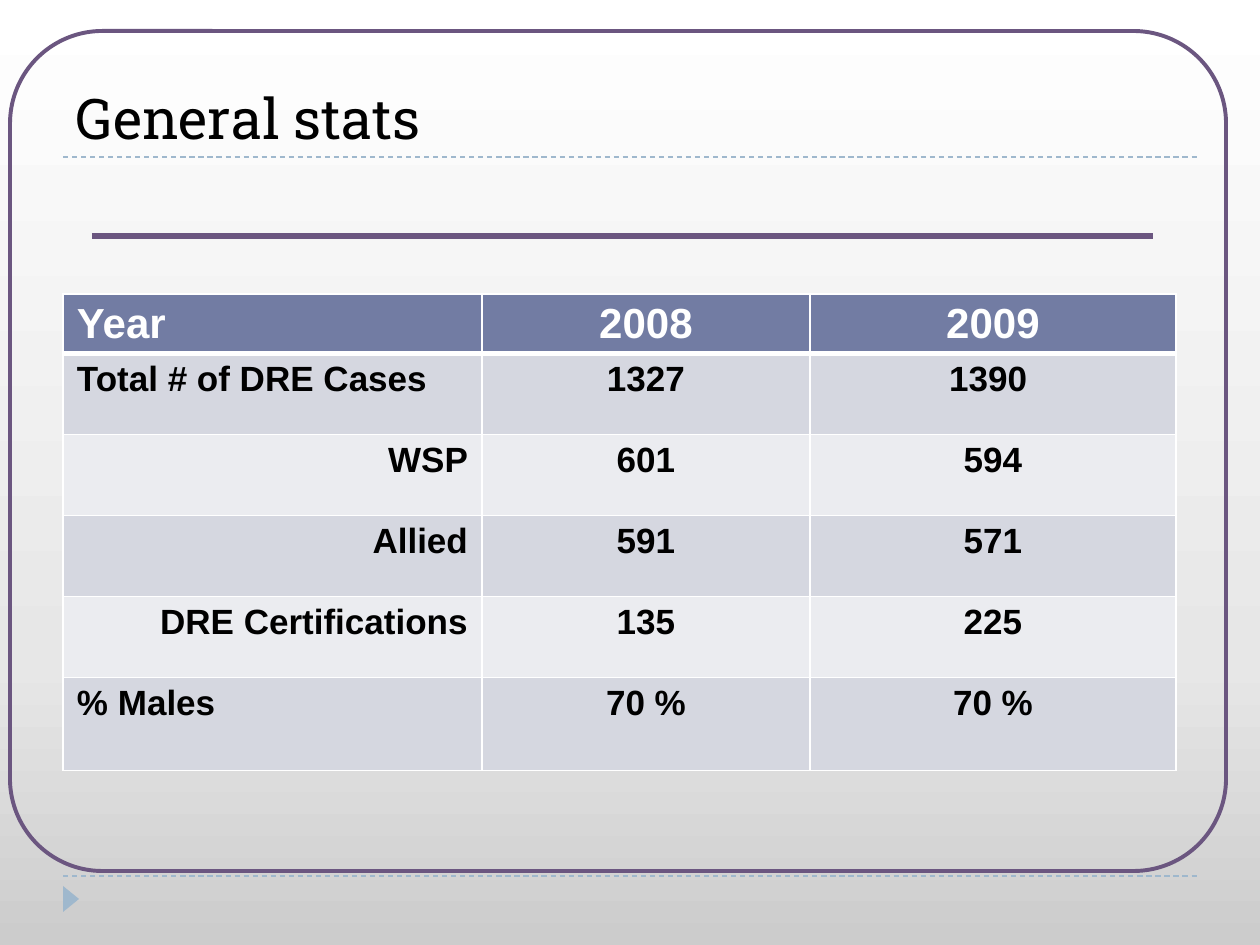
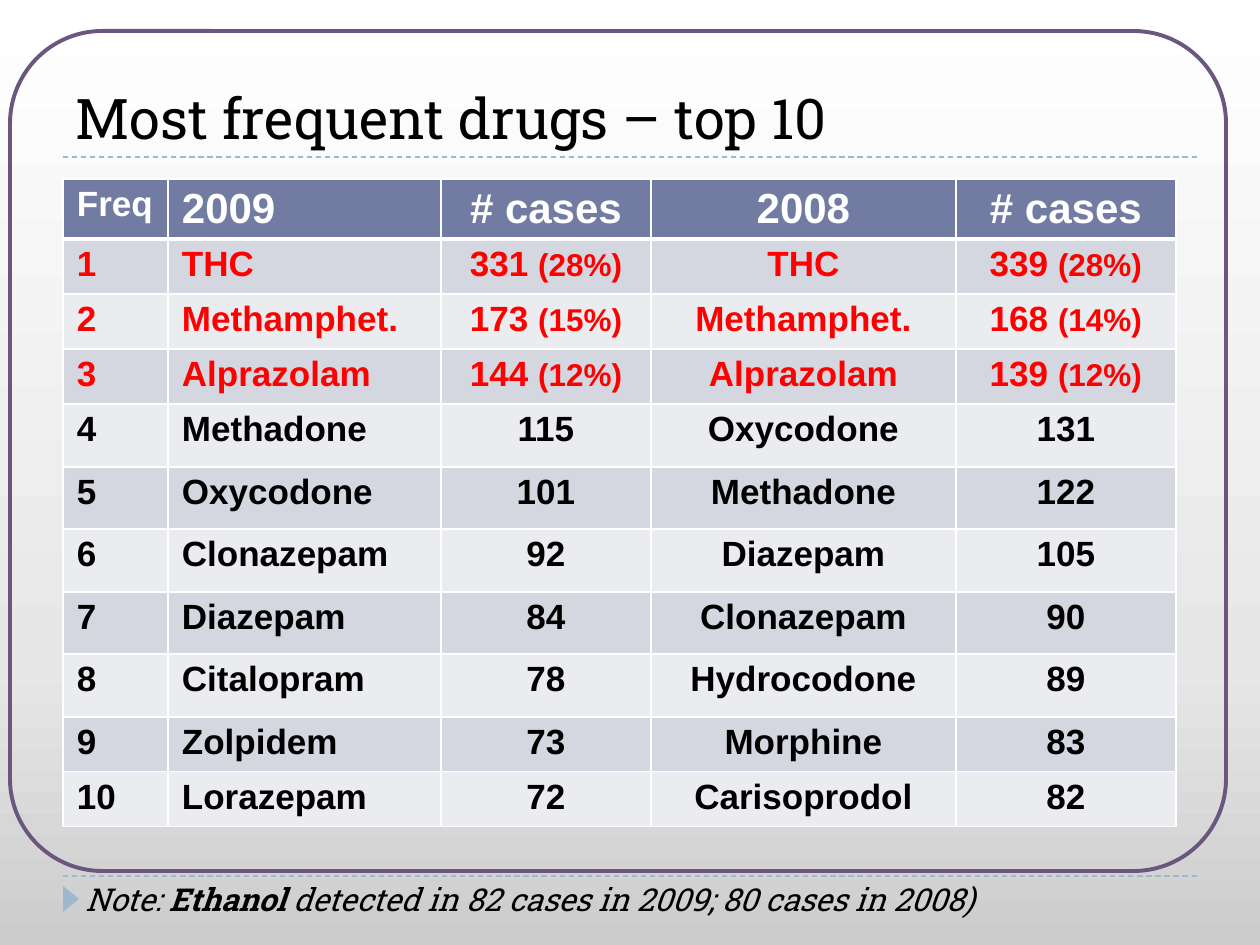
from copy import deepcopy

from lxml.etree import SubElement
from pptx import Presentation
from pptx.dml.color import RGBColor
from pptx.enum.dml import MSO_LINE
from pptx.enum.shapes import MSO_CONNECTOR, MSO_SHAPE
from pptx.enum.text import MSO_ANCHOR, MSO_AUTO_SIZE, PP_ALIGN
from pptx.oxml.ns import qn
from pptx.util import Emu, Pt

BLACK = RGBColor(0, 0, 0)
WHITE = RGBColor(255, 255, 255)
RED = RGBColor(255, 0, 0)
PURPLE = RGBColor(0x6B, 0x56, 0x80)
PALE_BLUE = RGBColor(0x9F, 0xB8, 0xCD)
HEADER_BLUE = RGBColor(0x72, 0x7C, 0xA3)
BAND_FILLS = [RGBColor(0xD5, 0xD7, 0xE0), RGBColor(0xEB, 0xEC, 0xF0)]
BACKGROUND_STOPS = [
    (0, RGBColor(0xCC, 0xCC, 0xCC)),
    (0.3, RGBColor(0xE7, 0xE7, 0xE7)),
    (1, WHITE),
]
TITLE_FONT = "Roboto Slab"
TABLE_FONT = "Arial"
LEFT, CENTER, RIGHT = PP_ALIGN.LEFT, PP_ALIGN.CENTER, PP_ALIGN.RIGHT
MARGIN, CONTENT_WIDTH = 63, 1134
TITLE_ONLY = 5

STATS = [
    ("Year", "2008", "2009"),
    ("Total # of DRE Cases", "1327", "1390 "),
    ("WSP", "601", "594"),
    ("Allied", "591", "571"),
    ("DRE Certifications", "135", "225"),
    ("% Males", "70 %", "70 %"),
]
DRUGS = [
    ("Freq", "2009", "# cases", "2008", "# cases"),
    ("1", "THC", "331 (28%)", "THC", "339 (28%)"),
    ("2", "Methamphet.", "173 (15%)", "Methamphet.", "168 (14%)"),
    ("3", "Alprazolam", "144 (12%)", "Alprazolam", "139 (12%)"),
    ("4", "Methadone", "115", "Oxycodone", "131"),
    ("5", "Oxycodone", "101", "Methadone", "122"),
    ("6", "Clonazepam", "92", "Diazepam", "105"),
    ("7", "Diazepam", "84", "Clonazepam", "90"),
    ("8", "Citalopram", "78", "Hydrocodone", "89"),
    ("9", "Zolpidem", "73", "Morphine", "83"),
    ("10", "Lorazepam", "72", "Carisoprodol", "82"),
]


def px(length):
    return Emu(round(length * 914400 / 126))


def write(frame, *spans, size, font=TITLE_FONT, color=BLACK, bold=False,
          italic=False, align=LEFT):
    para = frame.paragraphs[0]
    para.alignment = align
    for text, changes in spans:
        span = para.add_run()
        span.text = text
        style = {"size": size, "bold": bold, **changes}
        span.font.size = Pt(style["size"])
        span.font.bold = style["bold"]
        span.font.italic = italic
        span.font.name = font
        span.font.color.rgb = color


def add_line(page, left, right, y, color, width, dash=None):
    line = page.shapes.add_connector(
        MSO_CONNECTOR.STRAIGHT, px(left), px(y), px(right), px(y))
    line.line.color.rgb = color
    line.line.width = Pt(width)
    if dash:
        line.line.dash_style = dash
    SubElement(line.element.spPr, qn("a:effectLst"))


def add_preset(page, kind, left, top, width, height):
    shape = page.shapes.add_shape(kind, px(left), px(top), px(width), px(height))
    shape.shadow.inherit = False
    return shape


def set_background(page):
    fill = page.background.fill
    fill.gradient()
    fill.gradient_angle = 90
    stop_list = page.element.find(".//" + qn("a:gsLst"))
    stop_list.insert(1, deepcopy(stop_list[0]))
    for stop, (position, color) in zip(fill.gradient_stops, BACKGROUND_STOPS):
        stop.position = position
        stop.color.rgb = color


def add_page(deck, title):
    page = deck.slides.add_slide(deck.slide_layouts[TITLE_ONLY])
    set_background(page)
    for y in (876, 157):
        add_line(page, MARGIN, MARGIN + CONTENT_WIDTH, y, PALE_BLUE, 0.75,
                 MSO_LINE.DASH)

    marker = add_preset(page, MSO_SHAPE.ISOSCELES_TRIANGLE, 58, 891, 26, 16)
    marker.rotation = 90
    marker.fill.solid()
    marker.fill.fore_color.rgb = PALE_BLUE
    marker.line.fill.background()

    border = add_preset(page, MSO_SHAPE.ROUNDED_RECTANGLE, 10, 31, 1216, 840)
    border.adjustments[0] = 0.11
    border.fill.background()
    border.line.color.rgb = PURPLE
    border.line.width = Pt(2.25)

    box = page.shapes.title
    box.left, box.top = px(MARGIN), px(21)
    box.width, box.height = px(CONTENT_WIDTH), px(136)
    box.text_frame.auto_size = MSO_AUTO_SIZE.NONE
    box.text_frame.vertical_anchor = MSO_ANCHOR.BOTTOM
    write(box.text_frame, (title, {}), size=32)
    return page


def set_borders(cell, bottom_width):
    properties = cell._tc.get_or_add_tcPr()
    for side, width in (("L", 1), ("R", 1), ("T", 1), ("B", bottom_width)):
        line = SubElement(properties, qn("a:ln" + side), w=str(Pt(width)))
        fill = SubElement(line, qn("a:solidFill"))
        SubElement(fill, qn("a:srgbClr"), val=str(WHITE))


def cell_spans(text):
    count, opening, share = text.partition("(")
    if not opening:
        return [(text, {})]
    return [(count, {}), (opening + share, {"size": 18})]


def add_grid(page, top, rows, widths, heights, format_cell):
    frame = page.shapes.add_table(
        len(rows), len(widths), px(MARGIN), px(top),
        px(sum(widths)), px(sum(heights)))
    table = frame.table
    table.first_row = table.horz_banding = False
    for column, width in zip(table.columns, widths):
        column.width = px(width)
    for row, height in zip(table.rows, heights):
        row.height = px(height)
    for i, row in enumerate(rows):
        header = i == 0
        for j, text in enumerate(row):
            cell = table.cell(i, j)
            cell.margin_left = cell.margin_right = px(14)
            set_borders(cell, 3 if header else 1)
            cell.fill.solid()
            cell.fill.fore_color.rgb = HEADER_BLUE if header else BAND_FILLS[(i - 1) % 2]
            style = {"size": 24 if header else 20,
                     "color": WHITE if header else BLACK,
                     **format_cell(i, j)}
            write(cell.text_frame, *cell_spans(text), font=TABLE_FONT,
                  bold=True, **style)


def format_stat(row, column):
    if column:
        return {"align": CENTER}
    return {"align": RIGHT if row in (2, 3, 4) else LEFT}


def format_drug(row, column):
    style = {"align": CENTER if column > 1 else LEFT}
    if row in (1, 2, 3):
        style["color"] = RED
    if column == 0:
        style["size"] = 20
    return style


def add_note(page, *spans):
    box = page.shapes.add_textbox(px(73), px(861), px(CONTENT_WIDTH), px(63))
    box.text_frame.word_wrap = True
    box.text_frame.vertical_anchor = MSO_ANCHOR.BOTTOM
    write(box.text_frame, *spans, size=18, italic=True)


def main():
    deck = Presentation()
    deck.slide_width, deck.slide_height = px(1260), px(945)

    stats_page = add_page(deck, "General stats")
    add_line(stats_page, 92, 1153, 236, PURPLE, 3)
    add_grid(stats_page, 294, STATS, [419, 328, 366],
             [59] + [81] * 4 + [93], format_stat)

    drugs_page = add_page(deck, "Most frequent drugs – top 10")
    add_grid(drugs_page, 179, DRUGS, [105, 273, 210, 305, 220],
             [60] + [55] * 3 + [63, 62, 63, 62, 63] + [55] * 2, format_drug)
    add_note(drugs_page, ("Note: ", {}), ("Ethanol", {"bold": True}),
             (" detected in 82 cases in 2009; 80 cases in 2008)", {}))

    deck.save("out.pptx")


if __name__ == "__main__":
    main()
